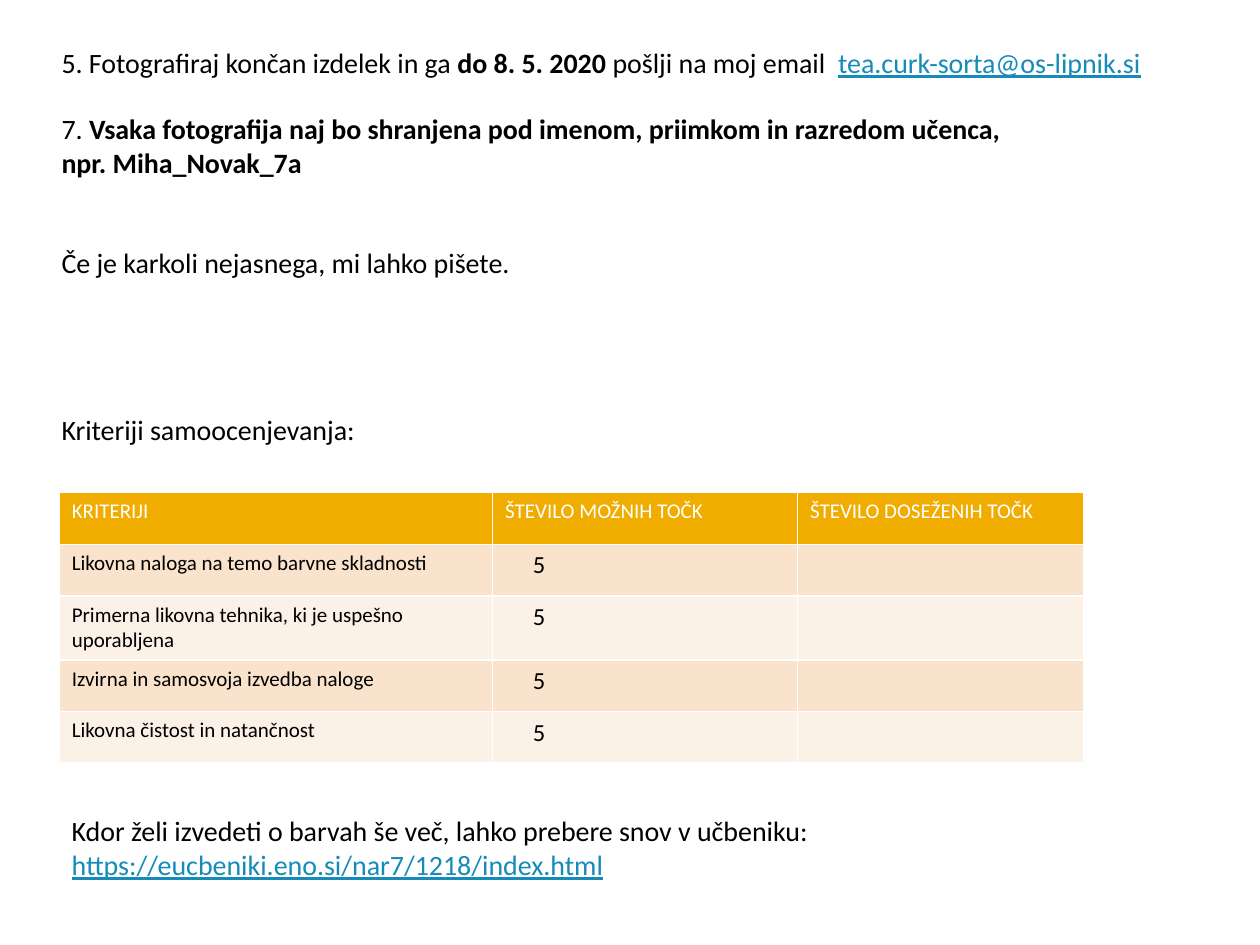
from lxml import etree
from pptx import Presentation
from pptx.dml.color import RGBColor
from pptx.enum import text
from pptx.oxml import ns
from pptx.util import Inches, Pt

COLORS = {
    "text": "000000",
    "link": "168BBA",
    "white": "FFFFFF",
    "header": "F0AD00",
    "odd_row": "F9E3CC",
    "even_row": "FCF1E7",
}
FONT = "Calibri"

# Each paragraph: space before in points, then runs of (text, style)
INSTRUCTIONS = [
    (0, [("5. Fotografiraj končan izdelek in ga ", ""),
         ("do 8. 5. 2020", "bold"),
         (" pošlji na moj email  ", ""),
         ("tea.curk-sorta@os-lipnik.si", "link")]),
    (18.8, [("7. ", ""),
            ("Vsaka fotografija naj bo shranjena pod imenom, priimkom in "
             "razredom učenca,", "bold"),
            ("\n", ""),
            ("npr. Miha_Novak_7a", "bold")]),
    (38.2, [("Če je karkoli nejasnega, mi lahko pišete.", "")]),
    (75.9, [("Kriteriji samoocenjevanja:", "")]),
]
FURTHER_READING = [
    (0, [("Kdor želi izvedeti o barvah še več, lahko prebere snov v učbeniku:", ""),
         ("\n", ""),
         ("https://eucbeniki.eno.si/nar7/1218/index.html", "link")]),
]
HEADINGS = ["KRITERIJI", "ŠTEVILO MOŽNIH TOČK", "ŠTEVILO DOSEŽENIH TOČK"]
CRITERIA = [
    "Likovna naloga na temo barvne skladnosti",
    "Primerna likovna tehnika, ki je uspešno uporabljena",
    "Izvirna in samosvoja izvedba naloge",
    "Likovna čistost in natančnost",
]
COLUMN_WIDTHS = [3.44, 2.42, 2.27]
ROW_HEIGHTS = [0.41, 0.41, 0.5, 0.41, 0.41]


def format_run(run, size, color="text", bold=False):
    run.font.name = FONT
    run.font.size = Pt(size)
    run.font.bold = bold
    run.font.color.rgb = RGBColor.from_string(COLORS[color])


def add_text(slide, left, top, width, height, paragraphs):
    box = slide.shapes.add_textbox(
        Inches(left), Inches(top), Inches(width), Inches(height))
    frame = box.text_frame
    frame.word_wrap = True
    frame.auto_size = text.MSO_AUTO_SIZE.NONE
    for index, (space, runs) in enumerate(paragraphs):
        paragraph = frame.add_paragraph() if index else frame.paragraphs[0]
        paragraph.space_before = Pt(space)
        for content, style in runs:
            if content == "\n":
                paragraph.add_line_break()
                continue
            run = paragraph.add_run()
            run.text = content
            format_run(run, 16, "link" if style == "link" else "text",
                       style == "bold")
            run.font.underline = style == "link"


def set_borders(cell):
    properties = cell._tc.get_or_add_tcPr()
    for position, side in enumerate(("a:lnL", "a:lnR", "a:lnT", "a:lnB")):
        line = etree.Element(ns.qn(side), w=str(Pt(1)))
        fill = etree.SubElement(line, ns.qn("a:solidFill"))
        etree.SubElement(fill, ns.qn("a:srgbClr"), val=COLORS["white"])
        properties.insert(position, line)


def fill_cell(cell, content, size, fill, color="text"):
    cell.fill.solid()
    cell.fill.fore_color.rgb = RGBColor.from_string(COLORS[fill])
    set_borders(cell)
    cell.text_frame.text = content
    for run in cell.text_frame.paragraphs[0].runs:
        format_run(run, size, color)


def add_criteria_table(slide, left, top):
    table = slide.shapes.add_table(
        len(ROW_HEIGHTS), len(COLUMN_WIDTHS), Inches(left), Inches(top),
        Inches(sum(COLUMN_WIDTHS)), Inches(sum(ROW_HEIGHTS))).table
    for column, width in zip(table.columns, COLUMN_WIDTHS):
        column.width = Inches(width)
    for row, height in zip(table.rows, ROW_HEIGHTS):
        row.height = Inches(height)

    for column, heading in enumerate(HEADINGS):
        fill_cell(table.cell(0, column), heading, 12, "header", "white")
    for row, criterion in enumerate(CRITERIA, start=1):
        fill = "odd_row" if row % 2 else "even_row"
        fill_cell(table.cell(row, 0), criterion, 12, fill)
        fill_cell(table.cell(row, 1), "5", 14, fill)
        table.cell(row, 1).margin_left = Inches(0.32)
        fill_cell(table.cell(row, 2), "", 12, fill)


def main():
    presentation = Presentation()
    presentation.slide_width = Inches(10)
    presentation.slide_height = Inches(7.5)
    slide = presentation.slides.add_slide(presentation.slide_layouts[6])

    # Instructions, self-assessment table and further reading
    add_text(slide, 0.39, 0.31, 9.14, 3.64, INSTRUCTIONS)
    add_criteria_table(slide, 0.47, 3.91)
    add_text(slide, 0.47, 6.41, 8.91, 1.25, FURTHER_READING)

    presentation.save("out.pptx")


if __name__ == "__main__":
    main()
